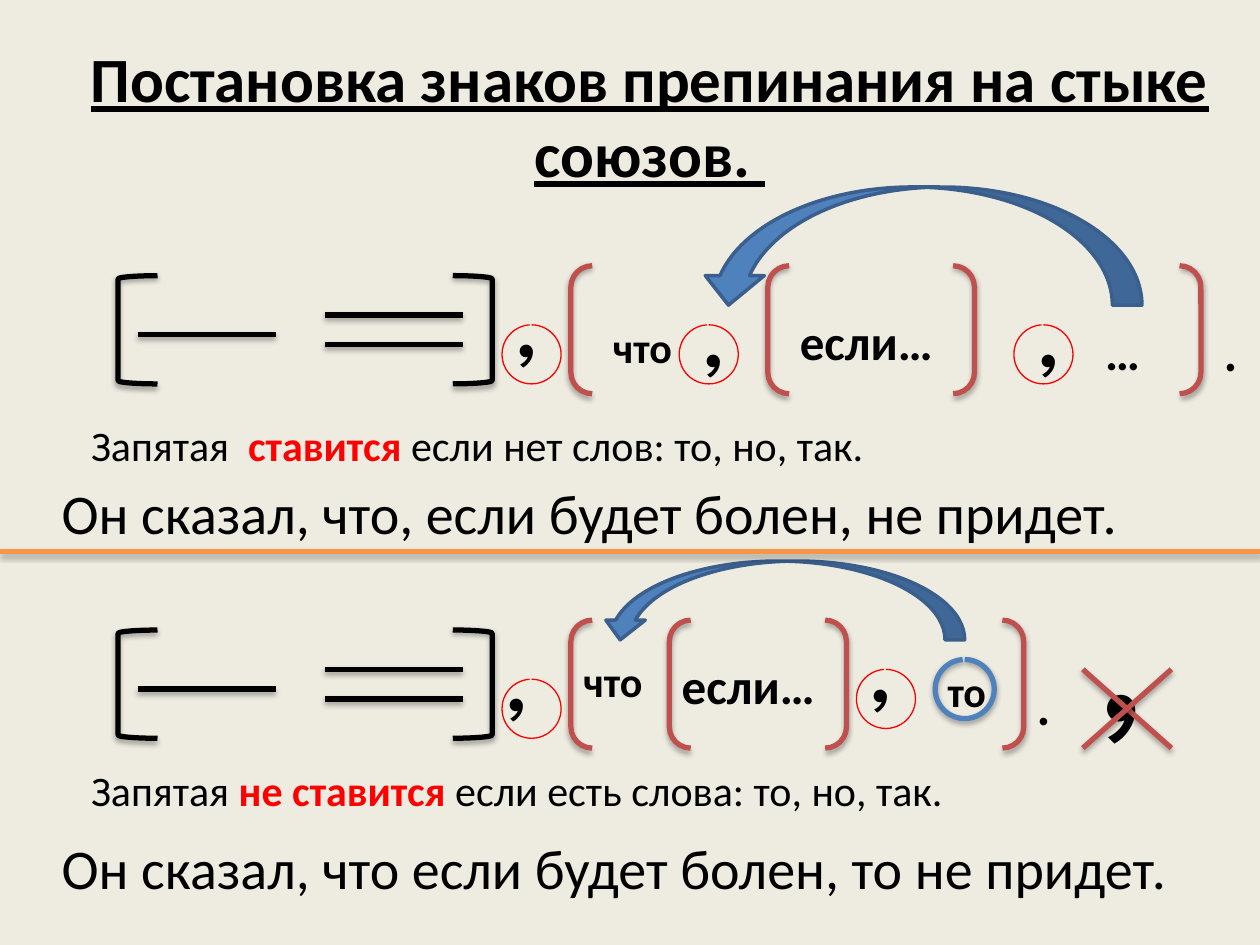
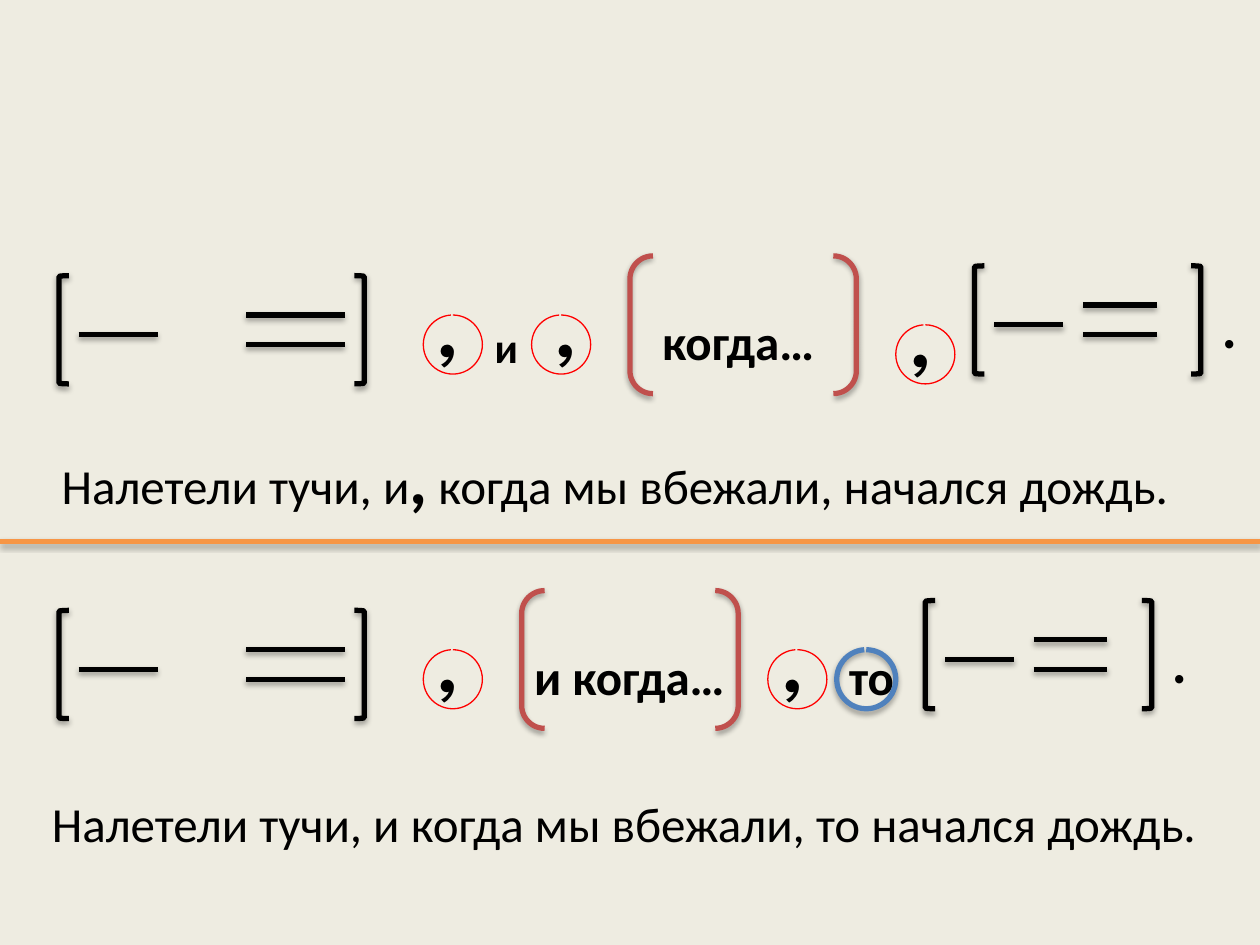
"""Build two slides of sentence schemes about commas where conjunctions meet."""
from lxml import etree
from pptx import Presentation
from pptx.dml.color import RGBColor
from pptx.enum.shapes import MSO_CONNECTOR, MSO_SHAPE
from pptx.enum.text import MSO_ANCHOR, MSO_AUTO_SIZE, PP_ALIGN
from pptx.oxml.ns import qn
from pptx.util import Pt

PX = 914400 / 128
WIDTH, HEIGHT = 1280, 960
BLACK = RGBColor(0x00, 0x00, 0x00)
CREAM = RGBColor(0xEE, 0xEC, 0xE1)
RED = RGBColor(0xFF, 0x00, 0x00)
BRICK = RGBColor(0xC0, 0x50, 0x4D)
BLUE = RGBColor(0x4F, 0x81, 0xBD)
NAVY = RGBColor(0x3A, 0x5F, 0x8C)
ORANGE = RGBColor(0xF7, 0x96, 0x46)
BODY, COMMA, STOP = "Calibri", "League Spartan", "Montserrat"
STRAIGHT = MSO_CONNECTOR.STRAIGHT
BRACKET, PARENS = MSO_SHAPE.RIGHT_BRACKET, MSO_SHAPE.DOUBLE_BRACKET
ARC, CURVED_ARROW = MSO_SHAPE.ARC, MSO_SHAPE.CURVED_RIGHT_ARROW
RING = 60
BRACKET_HEIGHT = 110
STRONG = {"bold": True, "color": RED}

# clauses: top, open bracket x, close bracket x, bracket width, subject, predicate
# parens: x, y, width, height; rings: x, y, colour; arrows: x, y, width, height
# words, commas, stops: text position and size; sentences: runs, x, y, width, size
SLIDES = [
    {
        "title": "Постановка знаков препинания на стыке союзов. ",
        "divider": 560,
        "clauses": [(top, 120, 460, 40, (140, 280), (330, 470))
                    for top in (280, 640)],
        "parens": [(580, 270, 410, 130), (780, 270, 440, 130),
                   (580, 630, 280, 130), (680, 630, 360, 130)],
        "rings": [(510, 330, RED), (690, 330, RED), (1030, 330, RED),
                  (510, 690, RED), (870, 680, RED), (950, 670, BLUE)],
        "arrows": [(875, 25, 120, 450), (755, 425, 80, 370)],
        "crosses": [(1100, 680, 1190, 760)],
        "words": [("что", 610, 320, 90, 24), ("если…", 800, 310, 180, 28),
                  ("…", 1110, 320, 61, 28), ("что", 580, 660, 130, 24),
                  ("если…", 680, 660, 180, 28), ("то", 950, 670, 80, 24)],
        "commas": [(510, 260, 100, 54), (700, 270, 30, 54),
                   (1040, 270, 138, 54), (500, 620, 100, 54),
                   (870, 610, 138, 54), (1100, 520, 80, 115)],
        "stops": [(1230, 300, 50, 40), (1040, 660, 50, 40)],
        "sentences": [
            ([("Запятая  ", {}), ("ставится", STRONG),
              (" если нет слов: то, но, так.", {})], 80, 420, 1040, 24),
            ([("Он сказал, что, если будет болен, не придет.", {})],
             50, 480, 1200, 32),
            ([("Запятая ", {}), ("не ставится ", STRONG),
              ("если есть слова: то, но, так.", {})], 80, 770, 1060, 24),
            ([("Он сказал, что если будет болен, то не придет.", {})],
             50, 840, 1160, 32),
        ],
    },
    {
        "title": None,
        "divider": 550,
        "clauses": [(280, 60, 360, 10, (80, 160), (250, 350)),
                    (270, 990, 1210, 10, (1010, 1080), (1100, 1175)),
                    (620, 60, 360, 10, (80, 160), (250, 350)),
                    (610, 940, 1160, 10, (960, 1030), (1050, 1125))],
        "parens": [(640, 260, 230, 140), (530, 600, 220, 140)],
        "rings": [(430, 320, RED), (540, 320, RED), (910, 330, RED),
                  (430, 660, RED), (780, 660, RED), (850, 660, BLUE)],
        "arrows": [],
        "crosses": [],
        "words": [("и", 490, 320, 60, 24), ("когда…", 660, 310, 200, 28),
                  ("и когда…", 530, 650, 330, 28), ("то", 850, 650, 100, 28)],
        "commas": [(430, 260, 100, 54), (550, 260, 30, 54),
                   (910, 270, 138, 54), (430, 600, 100, 54),
                   (780, 600, 138, 54)],
        "stops": [(1228, 270, 52, 44), (1178, 610, 52, 44)],
        "sentences": [
            ([("Налетели тучи, и", {}), (",", {"size": 40, "bold": True}),
              (" когда мы вбежали, начался дождь.", {})], 50, 435, 1180, 28),
            ([("Налетели тучи, и когда мы вбежали, то начался дождь.", {})],
             40, 800, 1200, 28),
        ],
    },
]


def emu(*lengths):
    return [round(n * PX) for n in lengths]


def add_run(p, text, size=28, font=BODY, color=BLACK, bold=False, underline=False):
    r = p.add_run()
    r.text = text
    r.font.name, r.font.size = font, Pt(size)
    r.font.bold, r.font.underline = bold, underline
    r.font.color.rgb = color


def add_text(s, runs, x, y, w, size, wrap=True, **style):
    biggest = max(fmt.get("size", size) for _, fmt in runs)
    height = 0.1 * 128 + biggest * 1.2 * 128 / 72
    tf = s.shapes.add_textbox(*emu(x, y, w, height)).text_frame
    tf.word_wrap = wrap
    tf.auto_size = MSO_AUTO_SIZE.SHAPE_TO_FIT_TEXT
    for text, fmt in runs:
        add_run(tf.paragraphs[0], text, **{"size": size, **style, **fmt})


def outline(sp, color, width=3, shadow=True):
    sp.line.color.rgb = color
    sp.line.width = Pt(width)
    effects = etree.SubElement(sp._element.spPr, qn("a:effectLst"))
    if shadow:
        cast = etree.SubElement(effects, qn("a:outerShdw"), blurRad="40000",
                                dist="23000", dir="5400000", rotWithShape="0")
        black = etree.SubElement(cast, qn("a:srgbClr"), val="000000")
        etree.SubElement(black, qn("a:alpha"), val="35000")


def add_line(s, x1, y1, x2, y2, color=BLACK):
    outline(s.shapes.add_connector(STRAIGHT, *emu(x1, y1, x2, y2)), color)


def add_figure(s, kind, box, color, fill=None, rotation=0, **line):
    sp = s.shapes.add_shape(kind, *emu(*box))
    sp.rotation = rotation
    if fill is None:
        sp.fill.background()
    else:
        sp.fill.solid()
        sp.fill.fore_color.rgb = fill
    outline(sp, color, **line)
    return sp


def add_clause(s, top, left, right, width, subject, predicate):
    for (x1, x2), drop in ((subject, 60), (predicate, 40), (predicate, 70)):
        add_line(s, x1, top + drop, x2, top + drop)
    for x, rotation in ((left, 180), (right, 0)):
        add_figure(s, BRACKET, (x, top, width, BRACKET_HEIGHT), BLACK,
                   rotation=rotation)


def add_ring(s, x, y, color):
    thick = color == BLUE
    sp = add_figure(s, ARC, (x, y, RING, RING), color,
                    width=3 if thick else 0.75, shadow=thick)
    sp.adjustments[0], sp.adjustments[1] = 162, 159.68


def set_title(s, text):
    title = s.shapes.title
    title.left, title.top, title.width, title.height = emu(40, 0, 1240, 160)
    tf = title.text_frame
    tf.word_wrap = True
    tf.auto_size = MSO_AUTO_SIZE.NONE
    tf.vertical_anchor = MSO_ANCHOR.TOP
    tf.margin_top = emu(40)[0]
    p = tf.paragraphs[0]
    p.alignment = PP_ALIGN.CENTER
    add_run(p, text, size=36, bold=True, underline=True)


def add_slide(prs, content):
    s = prs.slides.add_slide(prs.slide_layouts[5 if content["title"] else 6])
    s.background.fill.solid()
    s.background.fill.fore_color.rgb = CREAM
    if content["title"]:
        set_title(s, content["title"])
    for clause in content["clauses"]:
        add_clause(s, *clause)
    for box in content["parens"]:
        add_figure(s, PARENS, box, BRICK)
    for text, *place in content["words"]:
        add_text(s, [(text, {})], *place, wrap=text != "…", bold=True)
    for place in content["commas"]:
        add_text(s, [(",", {})], *place, font=COMMA)
    for place in content["stops"]:
        add_text(s, [(".", {})], *place, wrap=False, font=STOP)
    for ring in content["rings"]:
        add_ring(s, *ring)
    for box in content["arrows"]:
        add_figure(s, CURVED_ARROW, box, NAVY, fill=BLUE, rotation=90,
                   width=2, shadow=False)
    for x1, y1, x2, y2 in content["crosses"]:
        add_line(s, x1, y1, x2, y2, BRICK)
        add_line(s, x1, y2, x2, y1, BRICK)
    for sentence in content["sentences"]:
        add_text(s, *sentence)
    add_line(s, 0, content["divider"], WIDTH, content["divider"], ORANGE)


def main():
    prs = Presentation()
    prs.slide_width, prs.slide_height = emu(WIDTH, HEIGHT)
    for content in SLIDES:
        add_slide(prs, content)
    prs.save("out.pptx")


if __name__ == "__main__":
    main()
